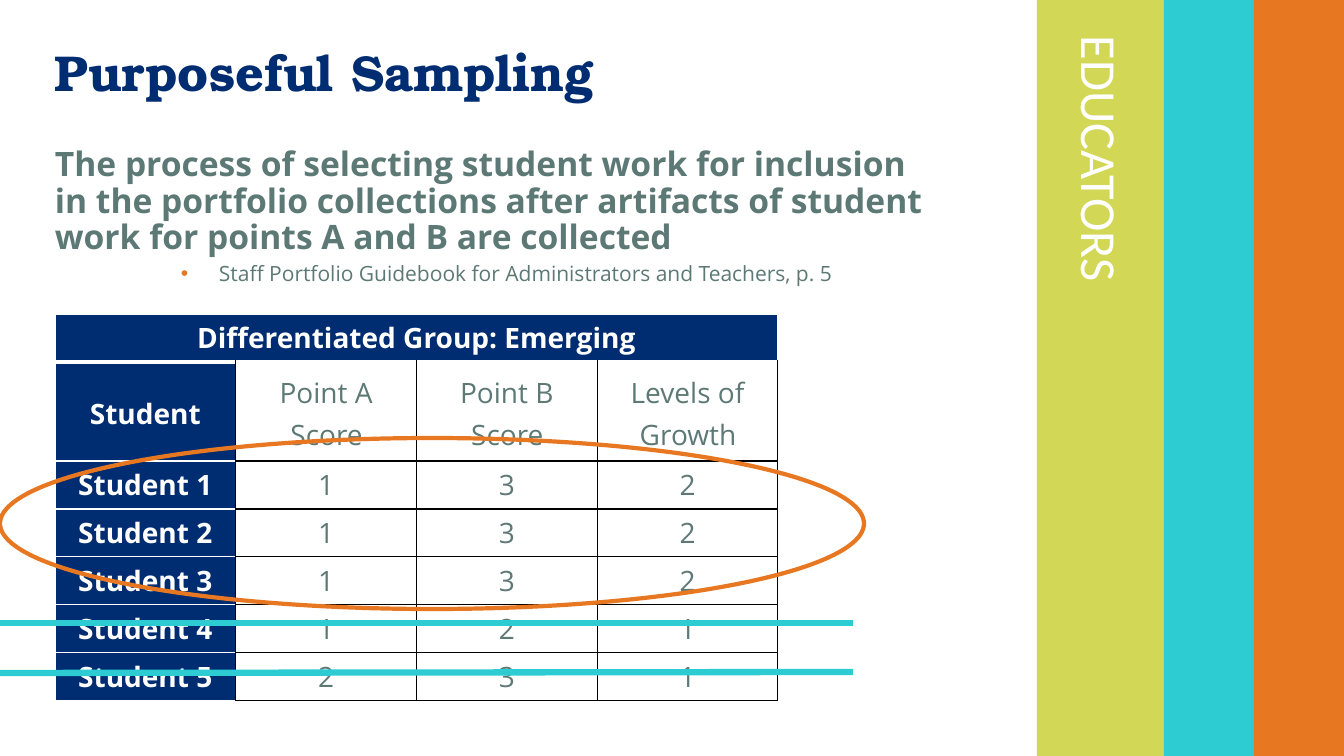
from pptx import Presentation
from pptx.dml.color import RGBColor
from pptx.enum.shapes import MSO_CONNECTOR as Link, MSO_SHAPE as Kind
from pptx.enum.text import MSO_ANCHOR as Anchor, PP_ALIGN as Align
from pptx.oxml.ns import qn
from pptx.util import Pt
from lxml.etree import SubElement as Sub

NAVY, SAGE, WHITE, BLACK = "002D72", "5D7975", "FFFFFF", "000000"
LIME, TEAL, ORANGE = "D2D755", "2DCCD3", "E87722"
SANS = "Open Sans"

TITLE = "Purposeful Sampling"
LEAD = ("The process of selecting student work for inclusion in the portfolio "
        "collections after artifacts of student work for points A and B are collected")
CITE = "Staff Portfolio Guidebook for Administrators and Teachers, p. 5"
SIDE = "EDUCATORS"
ROWS = [
    ("Differentiated Group: Emerging", "", "", ""),
    ("Student", "Point A Score", "Point B Score", "Levels of Growth"),
    ("Student 1", "1", "3", "2"),
    ("Student 2", "1", "3", "2"),
    ("Student 3", "1", "3", "2"),
    ("Student 4", "1", "2", "1"),
    ("Student 5", "2", "3", "1"),
]
BANDS = [(1037, 127, LIME), (1164, 90, TEAL), (1254, 90, ORANGE)]
STRIKES = [(623, 623), (673, 672)]
WIDE, HIGH = 1344, 756
GRID = (55, 314, 723, 387)
ROW, HEAD = 48, 99


def px(n):
    return round(n * 914400 / 100.8)


def box(*nums):
    return [px(n) for n in nums]


def rgb(code):
    return RGBColor.from_string(code)


def style(para, size, color, bold=False, face=SANS):
    font = para.font
    font.size, font.name, font.bold = Pt(size), face, bold
    font.color.rgb = rgb(color)


def indent(para, left, first):
    props = para._p.get_or_add_pPr()
    props.set("marL", str(px(left)))
    props.set("indent", str(px(first)))
    return props


def text(spot, words):
    area = slide.shapes.add_textbox(*box(*spot))
    frame = area.text_frame
    frame.word_wrap = True
    frame.text = words
    return area, frame, frame.paragraphs[0]


def edge(cell, side, color, width):
    line = Sub(cell._tc.get_or_add_tcPr(), qn("a:ln" + side), w=str(Pt(width)))
    Sub(Sub(line, qn("a:solidFill")), qn("a:srgbClr"), val=color)


def fill_cell(cell, words, r, c):
    top, dark = r == 0, r == 0 or c == 0
    for side in "LRTB":
        white = top or (c == 0 and side != "R") or (r == 1 and side == "T")
        thick = (top and side == "B") or (r == 1 and side == "T")
        edge(cell, side, WHITE if white else BLACK, 3 if thick else 1)
    if dark:
        cell.fill.solid()
        cell.fill.fore_color.rgb = rgb(NAVY)
    else:
        cell.fill.background()
    cell.margin_left = cell.margin_right = px(7)
    cell.margin_top = cell.margin_bottom = 0
    if r == 1:
        cell.vertical_anchor = Anchor.MIDDLE
    cell.text = words
    para = cell.text_frame.paragraphs[0]
    para.alignment = Align.CENTER
    para.line_spacing, para.space_after = 1.12, Pt(0.6)
    indent(para, 1, -1)
    style(para, 20, WHITE if dark else SAGE, dark)


deck = Presentation()
deck.slide_width, deck.slide_height = box(WIDE, HIGH)
slide = deck.slides.add_slide(deck.slide_layouts[6])

for left, width, color in BANDS:
    band = slide.shapes.add_shape(Kind.RECTANGLE, *box(left, 0, width, HIGH))
    band.shadow.inherit = False
    band.fill.solid()
    band.fill.fore_color.rgb = rgb(color)
    band.line.fill.background()

area, frame, para = text((869, 221, 463, 72), SIDE)
area.rotation = 90
style(para, 36, WHITE, face="Calibri")

area, frame, para = text((45, 143, 902, 499), LEAD)
para.line_spacing, para.space_before = 0.9, Pt(10)
style(para, 24, SAGE, True)
cite = frame.add_paragraph()
cite.text, cite.level = CITE, 2
cite.line_spacing, cite.space_before = 0.9, Pt(5)
style(cite, 15, SAGE)
props = indent(cite, 164, -38)
mark = props.find(qn("a:defRPr"))
dot = Sub(props, qn("a:buClr"))
Sub(dot, qn("a:srgbClr"), val=ORANGE)
face = Sub(props, qn("a:buFont"), typeface="Arial")
sign = Sub(props, qn("a:buChar"), char="•")
for part in (dot, face, sign):
    mark.addprevious(part)

area, frame, para = text((45, 25, 902, 101), TITLE)
frame.vertical_anchor = Anchor.MIDDLE
para.line_spacing = 0.9
style(para, 36, NAVY, True, "TeX Gyre Bonum")

table = slide.shapes.add_table(len(ROWS), len(ROWS[0]), *box(*GRID)).table
table.first_row = table.horz_banding = False
for col in table.columns:
    col.width = px(GRID[2] / len(ROWS[0]))
for r, row in enumerate(ROWS):
    table.rows[r].height = px(HEAD if r == 1 else ROW)
    for c, words in enumerate(row):
        fill_cell(table.cell(r, c), words, r, c)
table.cell(0, 0).merge(table.cell(0, 3))

ring = slide.shapes.add_shape(Kind.OVAL, *box(0, 438, 864, 171))
ring.shadow.inherit = False
ring.fill.background()
ring.line.color.rgb = rgb(ORANGE)
ring.line.width = Pt(3)

for start, end in STRIKES:
    bar = slide.shapes.add_connector(Link.STRAIGHT, *box(0, start, 853, end))
    bar.line.color.rgb = rgb(TEAL)
    bar.line.width = Pt(4.5)
    Sub(bar._element.spPr, qn("a:effectLst"))

deck.save("out.pptx")
